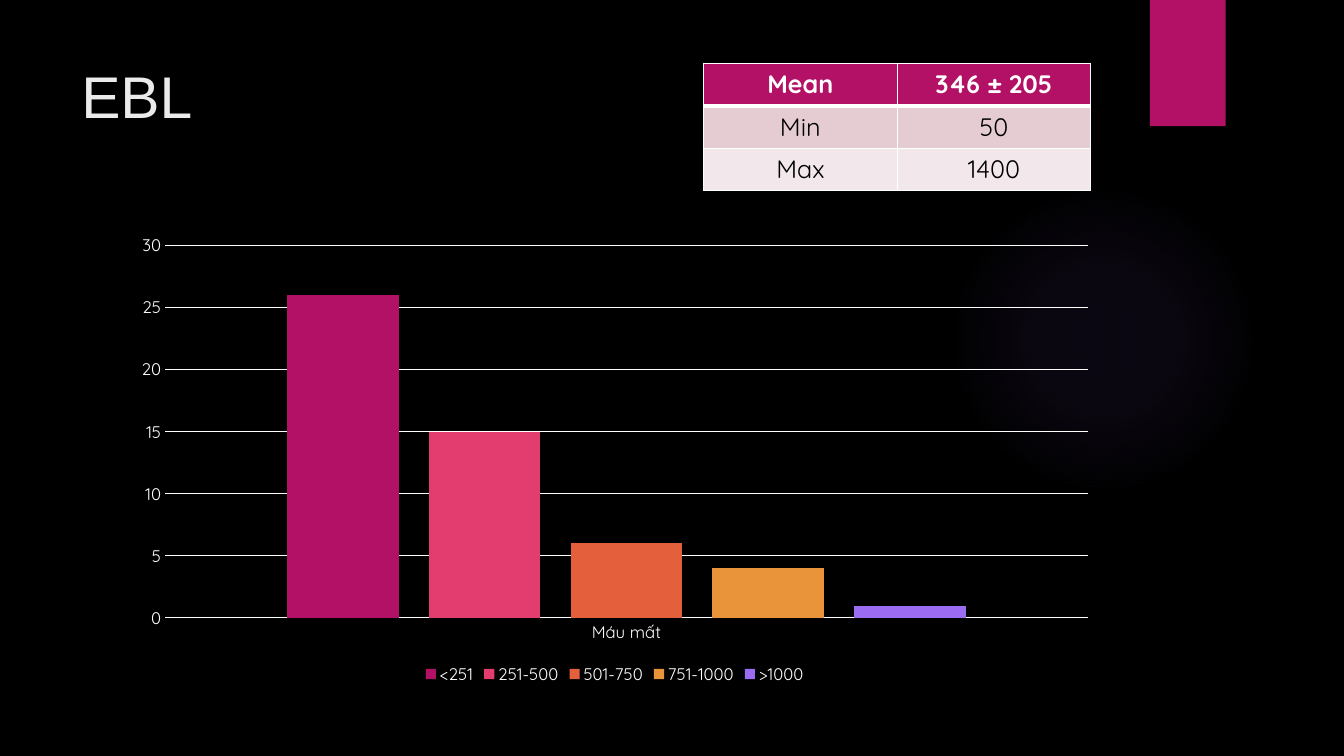
import pptx
import pptx.chart.data
import pptx.dml.color
import pptx.enum.chart
import pptx.enum.shapes
import pptx.enum.text
import pptx.oxml
import pptx.oxml.ns
import pptx.util

Cm = pptx.util.Cm
Pt = pptx.util.Pt
RGBColor = pptx.dml.color.RGBColor

BLACK = RGBColor(0x00, 0x00, 0x00)
WHITE = RGBColor(0xFF, 0xFF, 0xFF)
OFF_WHITE = RGBColor(0xEB, 0xEB, 0xEB)
MAGENTA = RGBColor(0xB3, 0x11, 0x66)
PINK = RGBColor(0xE3, 0x3D, 0x6F)
ORANGE = RGBColor(0xE4, 0x5F, 0x3C)
AMBER = RGBColor(0xE9, 0x94, 0x3A)
VIOLET = RGBColor(0x9B, 0x6B, 0xF2)
ROSE = RGBColor(0xE5, 0xCC, 0xD3)
PALE_ROSE = RGBColor(0xF2, 0xE7, 0xEA)

NAMESPACE = pptx.oxml.ns.nsdecls("a")


class SlideBuilder:
    title_font = "Arial"
    body_font = "Quicksand"

    def __init__(self, slide):
        self.slide = slide
        slide.background.fill.solid()
        slide.background.fill.fore_color.rgb = BLACK

    def style_font(self, font, name, size, color, bold=False):
        font.name = name
        font.size = Pt(size)
        font.color.rgb = color
        font.bold = bold

    def add_shape(self, kind, left, top, width, height):
        shape = self.slide.shapes.add_shape(kind, Cm(left), Cm(top), Cm(width), Cm(height))
        shape.shadow.inherit = False
        shape.line.fill.background()
        return shape

    def add_glow(self, left, top, diameter, color, stops):
        shape = self.add_shape(pptx.enum.shapes.MSO_SHAPE.OVAL, left, top, diameter, diameter)
        stop_xml = "".join(
            f'<a:gs pos="{position * 1000}"><a:srgbClr val="{color}">'
            f'<a:alpha val="{alpha * 1000}"/></a:srgbClr></a:gs>'
            for position, alpha in stops
        )
        gradient = pptx.oxml.parse_xml(
            f'<a:gradFill {NAMESPACE}><a:gsLst>{stop_xml}</a:gsLst><a:path path="circle">'
            '<a:fillToRect l="50000" t="50000" r="50000" b="50000"/></a:path></a:gradFill>'
        )
        shape.element.spPr.find(pptx.oxml.ns.qn("a:prstGeom")).addnext(gradient)

    def add_block(self, left, top, width, height, color):
        shape = self.add_shape(pptx.enum.shapes.MSO_SHAPE.RECTANGLE, left, top, width, height)
        shape.fill.solid()
        shape.fill.fore_color.rgb = color

    def add_title(self, text, left, top, width, height):
        box = self.slide.shapes.add_textbox(Cm(left), Cm(top), Cm(width), Cm(height))
        box.text_frame.word_wrap = True
        paragraph = box.text_frame.paragraphs[0]
        paragraph.text = text
        self.style_font(paragraph.font, self.title_font, 42, OFF_WHITE)

    def add_border(self, cell, side, points):
        cell._tc.get_or_add_tcPr().append(pptx.oxml.parse_xml(
            f'<a:ln{side} {NAMESPACE} w="{Pt(points)}"><a:solidFill>'
            f'<a:srgbClr val="{WHITE}"/></a:solidFill></a:ln{side}>'
        ))

    def add_table(self, rows, fills, left, top, column_width, row_height):
        column_count = len(rows[0])
        table = self.slide.shapes.add_table(
            len(rows), column_count, Cm(left), Cm(top),
            Cm(column_width * column_count), Cm(row_height * len(rows)),
        ).table
        for column in table.columns:
            column.width = Cm(column_width)
        for row_index, (values, fill) in enumerate(zip(rows, fills)):
            table.rows[row_index].height = Cm(row_height)
            header = row_index == 0
            borders = {"L": 1, "R": 1, "T": 3 if row_index == 1 else 1, "B": 3 if header else 1}
            for cell, value in zip(table.rows[row_index].cells, values):
                for side, points in borders.items():
                    self.add_border(cell, side, points)
                cell.fill.solid()
                cell.fill.fore_color.rgb = fill
                paragraph = cell.text_frame.paragraphs[0]
                paragraph.text = value
                paragraph.alignment = pptx.enum.text.PP_ALIGN.CENTER
                self.style_font(paragraph.font, self.body_font, 18, WHITE if header else BLACK, header)

    def style_line(self, line):
        line.color.rgb = WHITE
        line.width = Pt(0.75)

    def add_column_chart(self, category, series_rows, left, top, width, height):
        data = pptx.chart.data.CategoryChartData()
        data.categories = [category]
        for name, value, color in series_rows:
            data.add_series(name, [value])
        chart = self.slide.shapes.add_chart(
            pptx.enum.chart.XL_CHART_TYPE.COLUMN_CLUSTERED,
            Cm(left), Cm(top), Cm(width), Cm(height), data,
        ).chart
        chart.has_title = False
        self.style_font(chart.font, self.body_font, 10, WHITE)
        plot = chart.plots[0]
        plot.vary_by_categories = False
        plot.gap_width = 219
        plot.overlap = -27
        for series, (name, value, color) in zip(plot.series, series_rows):
            series.format.fill.solid()
            series.format.fill.fore_color.rgb = color
        for axis in (chart.category_axis, chart.value_axis):
            axis.major_tick_mark = pptx.enum.chart.XL_TICK_MARK.NONE
            axis.minor_tick_mark = pptx.enum.chart.XL_TICK_MARK.NONE
            self.style_font(axis.tick_labels.font, self.body_font, 12, WHITE)
        self.style_line(chart.category_axis.format.line)
        value_axis = chart.value_axis
        value_axis.minimum_scale = 0
        value_axis.maximum_scale = 30
        value_axis.major_unit = 5
        value_axis.format.line.fill.background()
        self.style_line(value_axis.major_gridlines.format.line)
        chart.has_legend = True
        chart.legend.position = pptx.enum.chart.XL_LEGEND_POSITION.BOTTOM
        chart.legend.include_in_layout = False
        self.style_font(chart.legend.font, self.body_font, 12, WHITE)


def main():
    presentation = pptx.Presentation()
    presentation.slide_width = Cm(33.87)
    presentation.slide_height = Cm(19.05)
    builder = SlideBuilder(presentation.slides.add_slide(presentation.slide_layouts[6]))

    builder.add_glow(23.9, 4.65, 7.82, VIOLET, [(0, 7), (36, 6), (69, 0)])
    builder.add_block(28.98, 0, 1.91, 3.18, MAGENTA)
    builder.add_title("EBL", 1.8, 1.37, 15, 2.2)
    builder.add_table(
        [("Mean", "346 ± 205"), ("Min", "50"), ("Max", "1400")],
        [MAGENTA, ROSE, PALE_ROSE],
        17.73, 1.6, 4.88, 1.07,
    )
    blood_loss = [
        ("<251", 26, MAGENTA),
        ("251-500", 15, PINK),
        ("501-750", 6, ORANGE),
        ("751-1000", 4, AMBER),
        (">1000", 1, VIOLET),
    ]
    builder.add_column_chart("Máu mất", blood_loss, 3.07, 5.69, 24.84, 11.66)

    presentation.save("out.pptx")


if __name__ == "__main__":
    main()
